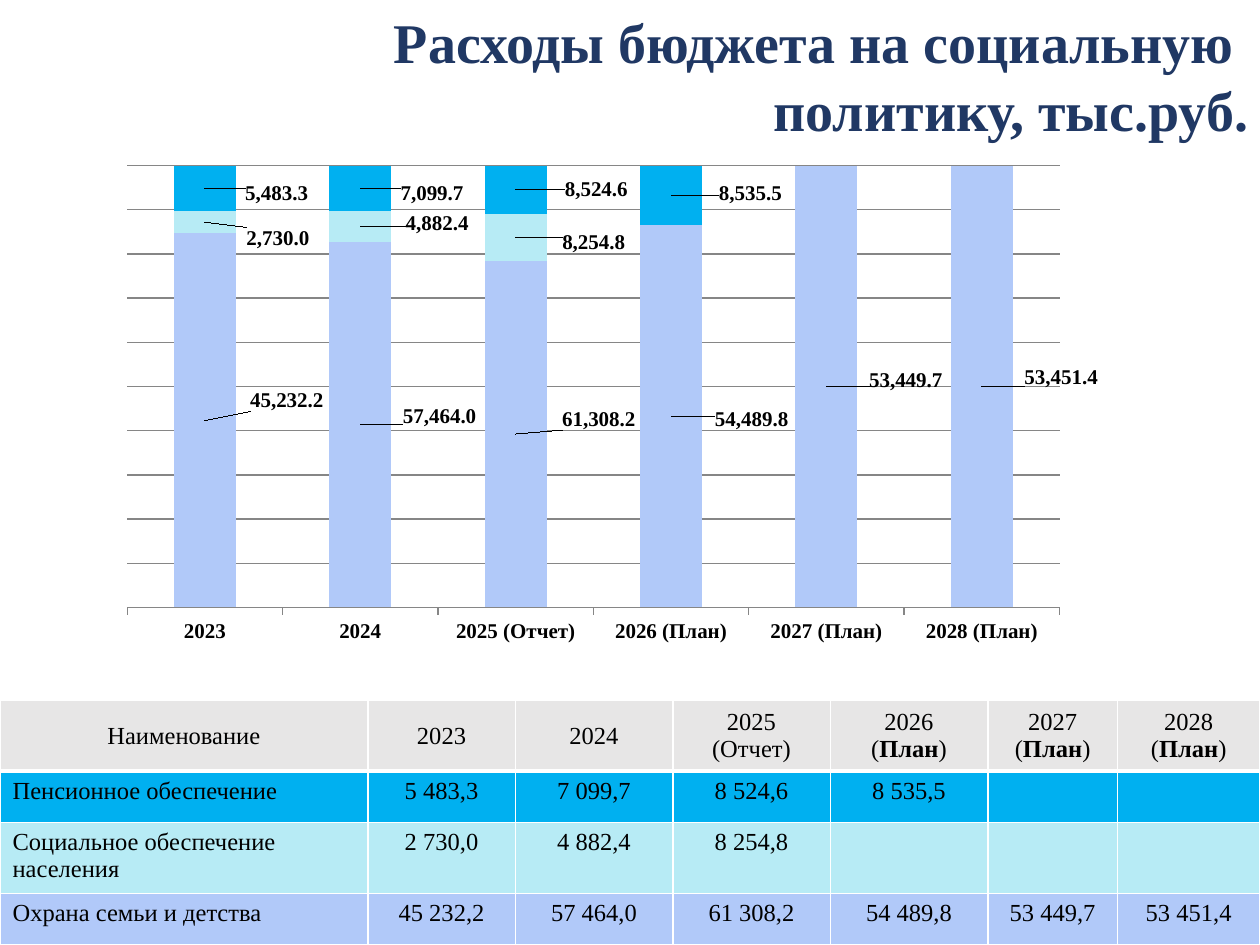
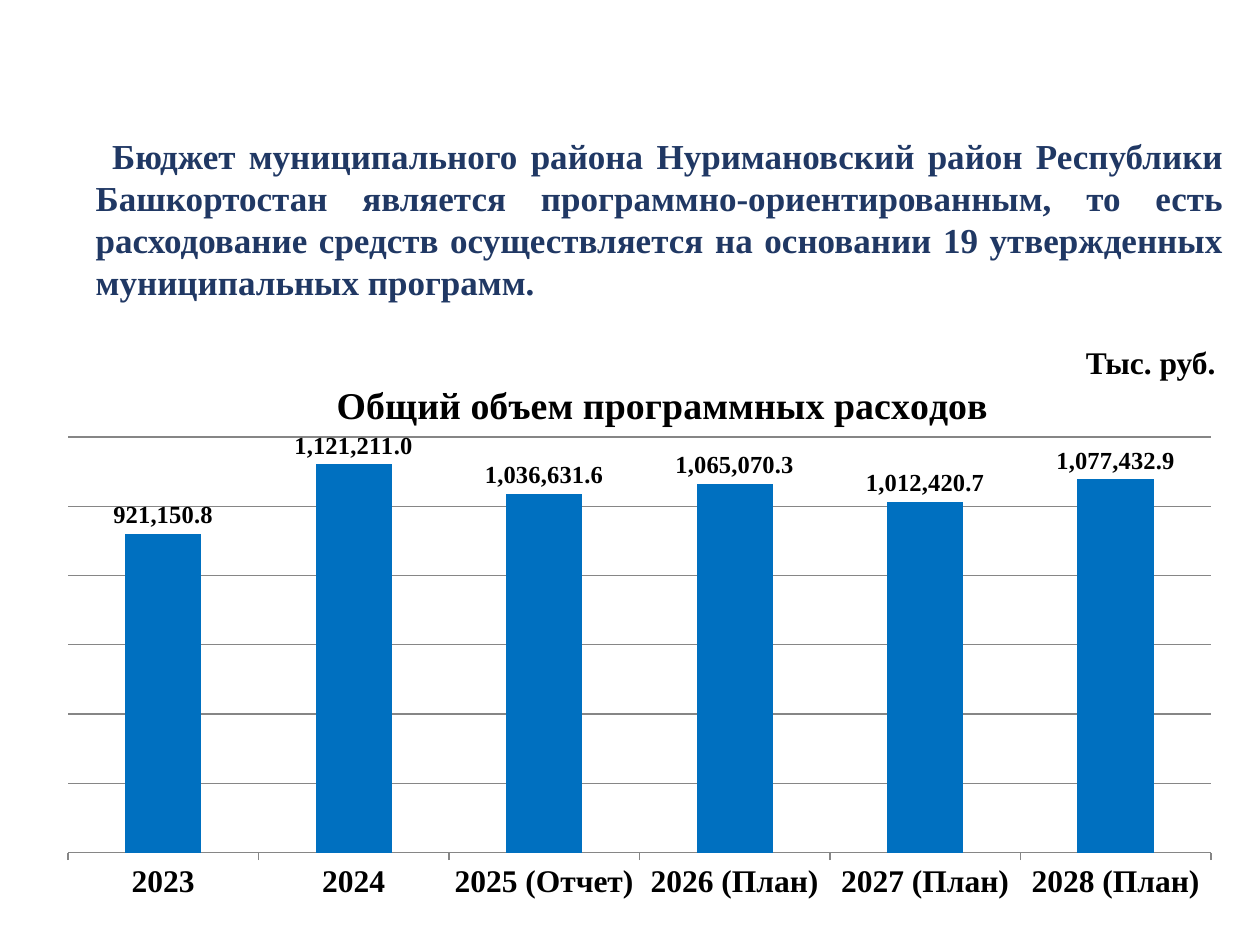
import lxml.etree
import pptx
import pptx.chart.data
import pptx.dml.color
import pptx.enum.chart
import pptx.enum.text
import pptx.oxml
import pptx.oxml.ns
import pptx.util

Inches = pptx.util.Inches
Pt = pptx.util.Pt
RGBColor = pptx.dml.color.RGBColor
Align = pptx.enum.text.PP_ALIGN
Anchor = pptx.enum.text.MSO_ANCHOR
ChartType = pptx.enum.chart.XL_CHART_TYPE
qn = pptx.oxml.ns.qn

NAVY = RGBColor(0x20, 0x38, 0x64)
BLACK = RGBColor(0, 0, 0)
GREY = RGBColor(0xE7, 0xE6, 0xE6)
GRID = RGBColor(0x86, 0x86, 0x86)
SKY = RGBColor(0x00, 0xB0, 0xF0)
AQUA = RGBColor(0xB7, 0xEB, 0xF5)
LILAC = RGBColor(0xB1, 0xC9, 0xF9)
BLUE = RGBColor(0x00, 0x70, 0xC0)

FONT = "Times New Roman"
NUMBER_FORMAT = "#,##0.0"
YEARS = ["2023", "2024", "2025 (Отчет)", "2026 (План)", "2027 (План)", "2028 (План)"]

SOCIAL_SPENDING = [
    ("Охрана семьи и детства", LILAC,
     [45232.2, 57464.0, 61308.2, 54489.8, 53449.7, 53451.4],
     [(0.65, -0.16), (0.63, -0.07), (0.66, -0.12), (0.64, 0.02), (0.63, -0.05), (0.63, -0.07)]),
    ("Социальное обеспечение населения", AQUA,
     [2730.0, 4882.4, 8254.8, None, None, None],
     [(0.58, 0.13), (0.61, -0.02), (0.62, 0.04)]),
    ("Пенсионное обеспечение", SKY,
     [5483.3, 7099.7, 8524.6, 8535.5, None, None],
     [(0.57, 0.04), (0.57, 0.04), (0.64, 0), (0.63, -0.02)]),
]
PROGRAM_TITLE = "Общий объем программных расходов"
PROGRAM_SPENDING = [921150.8, 1121211.0, 1036631.6, 1065070.3, 1012420.7, 1077432.9]


def russian_number(value):
    """Format a value with spaces between thousands and a decimal comma."""
    return "" if value is None else f"{value:,.1f}".replace(",", " ").replace(".", ",")


class BudgetDeck:
    """Hold the shared style and the current slide, and add elements to it."""

    def __init__(self):
        """Start a deck of 10 by 7.5 inches."""
        self.deck = pptx.Presentation()
        self.deck.slide_width = Inches(10)
        self.deck.slide_height = Inches(7.5)
        self.slide = None

    def add_slide(self, layout):
        """Add a slide and make it the current one."""
        self.slide = self.deck.slides.add_slide(self.deck.slide_layouts[layout])

    def style(self, font, size, color=BLACK, bold=True):
        """Apply the shared typeface to a font."""
        font.name = FONT
        font.size = Pt(size)
        font.bold = bold
        font.color.rgb = color

    def place(self, shape, left, top, width, height):
        """Move and size a shape, in inches."""
        shape.left, shape.top = Inches(left), Inches(top)
        shape.width, shape.height = Inches(width), Inches(height)

    def fill_placeholder(self, shape, area, lines, size, align, spacing):
        """Place a placeholder and write its paragraphs."""
        self.place(shape, *area)
        frame = shape.text_frame
        frame.word_wrap = True
        frame.auto_size = pptx.enum.text.MSO_AUTO_SIZE.NONE
        frame.vertical_anchor = Anchor.TOP
        frame.text = "\n".join(lines)
        for paragraph in frame.paragraphs:
            paragraph.alignment = align
            paragraph.line_spacing = Pt(spacing)
            paragraph.space_before = Pt(0)
            if shape != self.slide.shapes.title:
                properties = paragraph._p.get_or_add_pPr()
                properties.set("marL", str(Inches(0.38)))
                properties.set("indent", str(Inches(0.13)))
                lxml.etree.SubElement(properties, qn("a:buNone"))
            self.style(paragraph.font, size, NAVY)

    def add_title(self, lines):
        """Fill the right-aligned slide title."""
        self.fill_placeholder(self.slide.shapes.title, (-0.27, 0, 10.28, 1.18),
                              lines, 32, Align.RIGHT, 39)

    def add_body(self, text):
        """Fill the body with one justified paragraph without a bullet."""
        title = self.slide.shapes.title
        title._element.getparent().remove(title._element)
        self.fill_placeholder(self.slide.placeholders[1], (0.28, 1.02, 9.53, 2.32),
                              [text], 20, Align.JUSTIFY, 24)

    def add_label(self, text, left, top, width, height):
        """Add one line of text that does not wrap."""
        box = self.slide.shapes.add_textbox(*map(Inches, (left, top, width, height)))
        box.text_frame.word_wrap = False
        paragraph = box.text_frame.paragraphs[0]
        paragraph.text = text
        self.style(paragraph.font, 18)

    def manual_layout(self, **settings):
        """Return a chart layout element with the given settings."""
        layout = pptx.oxml.parse_xml(
            '<c:layout xmlns:c="http://schemas.openxmlformats.org/drawingml/2006/chart">'
            "<c:manualLayout/></c:layout>")
        for name, value in settings.items():
            lxml.etree.SubElement(layout[0], qn("c:" + name)).set("val", str(value))
        return layout

    def add_chart(self, kind, area, series_list, plot_area, axis_size, label_size):
        """Add a column chart over the years with value labels."""
        data = pptx.chart.data.CategoryChartData(number_format=NUMBER_FORMAT)
        data.categories = YEARS
        for name, color, values, offsets in series_list:
            data.add_series(name, values)
        chart = self.slide.shapes.add_chart(kind, *map(Inches, area), data).chart
        chart.has_legend = False
        chart.has_title = False
        chart.font.name = "Calibri"
        chart.font.size = Pt(18)
        chart.font.color.rgb = BLACK

        values_axis, years_axis = chart.value_axis, chart.category_axis
        values_axis.visible = False
        values_axis.has_major_gridlines = True
        for line in (values_axis.major_gridlines.format.line, years_axis.format.line):
            line.color.rgb = GRID
            line.width = Pt(0.75)
        years_axis.major_tick_mark = pptx.enum.chart.XL_TICK_MARK.OUTSIDE
        self.style(years_axis.tick_labels.font, axis_size)

        plot = chart.plots[0]
        plot.gap_width = 150
        plot.vary_by_categories = False
        for series, (name, color, values, offsets) in zip(plot.series, series_list):
            series.format.fill.solid()
            series.format.fill.fore_color.rgb = color
            labels = series.data_labels
            labels.show_value = True
            labels.number_format = NUMBER_FORMAT
            labels.number_format_is_linked = False
            self.style(labels.font, label_size)
            self.shift_labels(series, offsets, area, label_size)

        plot_element = chart._chartSpace.chart.plotArea
        for layout in plot_element.findall(qn("c:layout")):
            plot_element.remove(layout)
        x, y, w, h = plot_area
        plot_element.insert(0, self.manual_layout(
            layoutTarget="inner", xMode="edge", yMode="edge", x=x, y=y, w=w, h=h))
        return chart

    def shift_labels(self, series, offsets, area, size):
        """Move the labels of a series off their bars, in inches."""
        for index, (across, down) in enumerate(offsets):
            self.style(series.points[index].data_label.font, size)
            label = series._element.xpath(f"c:dLbls/c:dLbl[c:idx/@val={index}]")[0]
            label.insert(1, self.manual_layout(x=across / area[2], y=down / area[3]))

    def add_chart_title(self, chart, text, size, x, y):
        """Give a chart a title at a fraction of its area."""
        frame = chart.chart_title.text_frame
        frame.text = text
        self.style(frame.paragraphs[0].font, size)
        title = chart.chart_title._element
        for layout in title.findall(qn("c:layout")):
            title.remove(layout)
        title.find(qn("c:tx")).addnext(
            self.manual_layout(xMode="edge", yMode="edge", x=x, y=y))

    def fill_cell(self, cell, text, color, align, heading=False):
        """Write, colour and outline one table cell."""
        properties = cell._tc.get_or_add_tcPr()
        for side in "LRTB":
            width = 3 if heading and side == "B" else 1
            line = lxml.etree.SubElement(properties, qn("a:ln" + side), w=str(Pt(width)))
            fill = lxml.etree.SubElement(line, qn("a:solidFill"))
            lxml.etree.SubElement(fill, qn("a:srgbClr"), val="FFFFFF")
        cell.fill.solid()
        cell.fill.fore_color.rgb = color
        cell.vertical_anchor = Anchor.MIDDLE if heading else Anchor.TOP
        cell.text = text
        for paragraph in cell.text_frame.paragraphs:
            paragraph.alignment = align
            self.style(paragraph.font, 14, bold=False)
            if paragraph.text == "(План)":
                paragraph.clear()
                for part in ("(", "План", ")"):
                    span = paragraph.add_run()
                    span.text = part
                    span.font.bold = part == "План"

    def add_table(self, area, widths, heights, headings, rows):
        """Add a table with a heading row and coloured rows."""
        table = self.slide.shapes.add_table(
            len(heights), len(widths), *map(Inches, area)).table
        table.first_row = False
        table.horz_banding = False
        for column, width in zip(table.columns, widths):
            column.width = Inches(width)
        for row, height in zip(table.rows, heights):
            row.height = Inches(height)
        for column, heading in enumerate(headings):
            self.fill_cell(table.cell(0, column), heading, GREY, Align.CENTER, True)
        for row, (name, color, values, offsets) in enumerate(rows, 1):
            self.fill_cell(table.cell(row, 0), name, color, Align.LEFT)
            for column, value in enumerate(values, 1):
                self.fill_cell(table.cell(row, column), russian_number(value),
                               color, Align.CENTER)


def add_social_slide(budget):
    """Build the slide on social policy spending."""
    budget.add_slide(5)
    budget.add_title(["Расходы бюджета на социальную ", "политику, тыс.руб."])
    budget.add_table((0, 5.56, 10, 1.94),
                     [2.92, 1.17, 1.25, 1.25, 1.25, 1.03, 1.13],
                     [0.56, 0.41, 0.56, 0.41],
                     ["Наименование"] + [year.replace(" ", "\n") for year in YEARS],
                     SOCIAL_SPENDING[::-1])
    chart = budget.add_chart(ChartType.COLUMN_STACKED_100, (0.01, 1.27, 10, 4.44),
                             SOCIAL_SPENDING, (0.1, 0.01, 0.74, 0.79), 12, 12)
    chart.plots[0].overlap = 100


def add_program_slide(budget):
    """Build the slide on total programme spending."""
    budget.add_slide(1)
    budget.add_body(
        "Бюджет муниципального района Нуримановский район Республики Башкортостан "
        "является программно-ориентированным, то есть расходование средств "
        "осуществляется на основании 19 утвержденных муниципальных программ.")
    chart = budget.add_chart(ChartType.COLUMN_CLUSTERED, (0.35, 2.7, 9.45, 4.52),
                             [(PROGRAM_TITLE, BLUE, PROGRAM_SPENDING, [])],
                             (0.02, 0.17, 0.96, 0.73), 18, 14)
    chart.value_axis.minimum_scale = 0
    chart.value_axis.maximum_scale = 1200000
    chart.value_axis.major_unit = 200000
    chart.plots[0].series[0].data_labels.position = (
        pptx.enum.chart.XL_LABEL_POSITION.OUTSIDE_END)
    budget.add_chart_title(chart, PROGRAM_TITLE, 21.6, 0.24, 0.06)
    budget.add_label("Тыс. руб.", 8.52, 2.67, 1.24, 0.4)


def main():
    """Build and save the deck."""
    budget = BudgetDeck()
    add_social_slide(budget)
    add_program_slide(budget)
    budget.deck.save("out.pptx")


if __name__ == "__main__":
    main()
